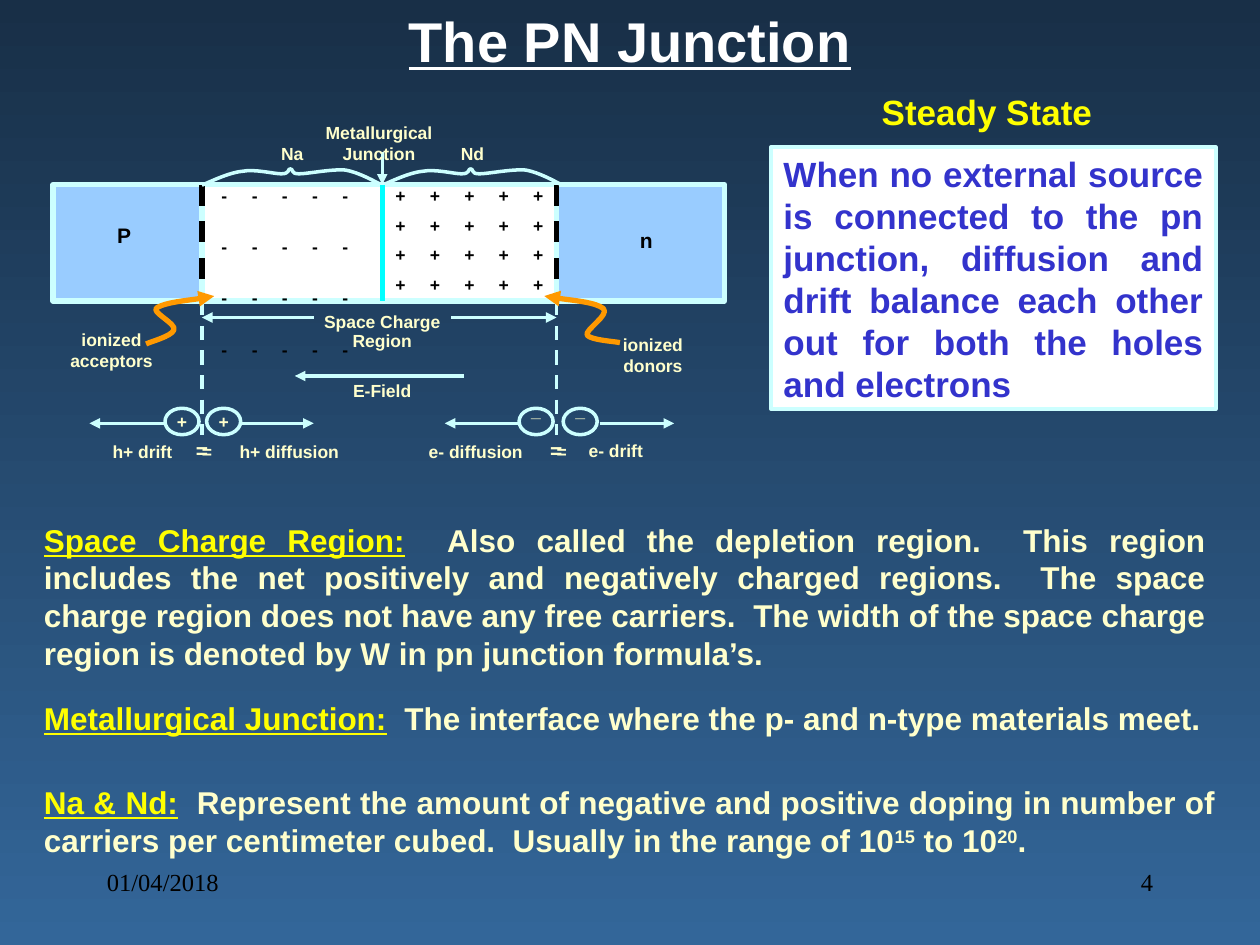
from dataclasses import dataclass
from typing import Any, NamedTuple

import lxml.etree
import pptx
import pptx.dml.color
import pptx.enum.dml
import pptx.enum.shapes
import pptx.enum.text
import pptx.oxml.ns
import pptx.util

Align = pptx.enum.text.PP_ALIGN
Anchor = pptx.enum.text.MSO_ANCHOR
Shape = pptx.enum.shapes.MSO_SHAPE
CELL = pptx.util.Inches(0.1)  # the slide is a grid of 100 columns by 75 rows


@dataclass(frozen=True)
class Theme:
    top: str = "182F47"
    bottom: str = "336699"
    outline: str = "CCFFFF"
    neutral: str = "99CCFF"
    junction: str = "00FFFF"
    pointer: str = "FF9900"
    label: str = "FFFFCC"
    accent: str = "FFFF00"
    quote: str = "3333CC"
    white: str = "FFFFFF"
    black: str = "000000"
    title: int = 32
    heading: int = 20
    body: int = 18
    footer: int = 14
    region: int = 12
    small: int = 10


THEME = Theme()


class Box(NamedTuple):
    col: float
    row: float
    cols: float
    rows: float


class Run(NamedTuple):
    text: str
    color: str = THEME.label
    underline: bool = False
    raised: bool = False


Point = tuple[float, float]


def cells(*values: float) -> list[int]:
    return [round(value * CELL) for value in values]


def rgb(color: str) -> pptx.dml.color.RGBColor:
    return pptx.dml.color.RGBColor.from_string(color)


def assign(target: Any, values: dict[str, Any]) -> None:
    for name, value in values.items():
        setattr(target, name, value)


def child(parent: Any, tag: str, **attributes: str) -> Any:
    return lxml.etree.SubElement(parent, pptx.oxml.ns.qn(tag), attributes)


def write(paragraph: Any, runs: list[Run], size: int, font: str = "Arial",
          bold: bool = True, **layout: Any) -> None:
    assign(paragraph, layout)
    for part in runs:
        run = paragraph.add_run()
        run.text = part.text
        assign(run.font, {"name": font, "size": pptx.util.Pt(size), "bold": bold,
                          "underline": part.underline})
        run.font.color.rgb = rgb(part.color)
        if part.raised:
            run.font._element.set("baseline", "30000")


def text(slide: Any, box: Box, runs: list[Run], size: int = THEME.small,
         alignment: Any = Align.CENTER, **style: Any) -> None:
    frame = slide.shapes.add_textbox(*cells(*box)).text_frame
    frame.word_wrap = True
    write(frame.paragraphs[0], runs, size, alignment=alignment, **style)


def charges(slide: Any, box: Box, sign: str, step: float, gap: float) -> None:
    """Four rows of five signs, set on tab stops `step` columns apart."""
    frame = slide.shapes.add_textbox(*cells(*box)).text_frame
    frame.word_wrap = True
    for row in range(4):
        paragraph = frame.paragraphs[0] if row == 0 else frame.add_paragraph()
        write(paragraph, [Run("\t".join(sign * 5), THEME.black)], THEME.small,
              space_before=pptx.util.Pt(gap if row else 0))
        stops = child(paragraph._p.get_or_add_pPr(), "a:tabLst")
        for column in range(1, 5):
            child(stops, "a:tab", pos=str(cells(step * column)[0]), algn="l")


def stroke(item: Any, color: str, width: float, dashed: bool = False, arrow: bool = False) -> None:
    item.line.color.rgb = rgb(color)
    item.line.width = pptx.util.Pt(width)
    if dashed:
        item.line.dash_style = pptx.enum.dml.MSO_LINE.DASH
    if arrow:
        child(item.line._get_or_add_ln(), "a:tailEnd", type="triangle")


def line(slide: Any, start: Point, end: Point, color: str = THEME.outline,
         width: float = 2, **style: bool) -> None:
    connector = slide.shapes.add_connector(
        pptx.enum.shapes.MSO_CONNECTOR.STRAIGHT, *cells(*start, *end))
    stroke(connector, color, width, **style)
    child(connector._element.spPr, "a:effectLst")


def panel(slide: Any, kind: Any, box: Box, fill: str | None, width: float = 2) -> Any:
    shape = slide.shapes.add_shape(kind, *cells(*box))
    shape.shadow.inherit = False
    if fill:
        shape.fill.solid()
        shape.fill.fore_color.rgb = rgb(fill)
    else:
        shape.fill.background()
    stroke(shape, THEME.outline, width)
    return shape


def curve(slide: Any, knots: list[Point], color: str, width: float, arrow: bool = False) -> None:
    """Draw cubic Bézier segments; knots are start, then control, control, end."""
    builder = slide.shapes.build_freeform(*cells(*knots[0]))
    builder.add_line_segments([cells(*knot) for knot in knots[1:]], close=False)
    shape = builder.convert_to_shape()
    steps = list(shape._element.iter(pptx.oxml.ns.qn("a:lnTo")))
    for first in range(0, len(steps), 3):
        outline = steps[first].getparent()
        segment = child(outline, "a:cubicBezTo")
        for step in steps[first:first + 3]:
            segment.append(step[0])
            outline.remove(step)
    shape.shadow.inherit = False
    shape.fill.background()
    stroke(shape, color, width, arrow=arrow)


def carrier(slide: Any, col: float, sign: str, lift: float) -> None:
    frame = panel(slide, Shape.OVAL, Box(col, 32.4, 2.7, 2.1), None).text_frame
    assign(frame, {"word_wrap": False, "vertical_anchor": Anchor.MIDDLE, "margin_top": 0,
                   "margin_bottom": cells(lift)[0]})
    write(frame.paragraphs[0], [Run(sign)], THEME.small, alignment=Align.CENTER)


TOP, BASE, FLOW = 14.65, 23.9, 33.6
LEFT, MIDDLE, RIGHT = 16.03, 30.34, 44.17
BRACE = [(0, 1.3), (.5, 1.1), (2.1, .3), (3.2, .2), (4.2, 0), (5.7, .4), (6.3, .4), (7, .4),
         (6.8, 0), (7, 0), (7.3, 0), (7, .4), (7.7, .4), (8.4, .4), (10.3, 0), (11.4, .1),
         (12.5, .3), (13.7, 1), (14.3, 1.3)]
ACCEPTOR_POINTER = [(11.6, 27.3), (12, 27.1), (13.6, 26.7), (13.8, 26.2), (14.1, 25.7),
                    (11.8, 24.7), (12.5, 24.4), (13.2, 24), (16.1, 23.7), (17, 23.5)]
DONOR_POINTER = [(49.2, 27.2), (48.8, 27.1), (46.9, 27), (46.6, 26.6), (46.4, 26.2),
                 (48.4, 25), (47.9, 24.5), (47.3, 24), (44.2, 23.7), (43.2, 23.5)]
LABELS = [
    ("Na", Box(20.5, 10.85, 5.4, 2.7)), ("Nd", Box(34.8, 10.85, 5.4, 2.7)),
    ("Metallurgical Junction", Box(22.93, 9.2, 14.3, 4.3)),
    ("ionized acceptors", Box(4.15, 25.6, 9.4, 4.3)),
    ("ionized donors", Box(47.62, 26, 8.4, 4.3)),
    ("h+ drift", Box(6.6, 34.5, 9.4, 2.7)), ("h+ diffusion", Box(17.5, 34.5, 10.9, 2.7)),
    ("e- diffusion", Box(32.3, 34.5, 10.9, 2.7)), ("e- drift", Box(44.17, 34.45, 9.4, 2.7)),
    ("=", Box(15.05, 34.5, 2, 2.7)), ("=", Box(43.2, 34.5, 2, 2.7)),
]
ARROWS = [((MIDDLE, 12.1), (MIDDLE, TOP)), ((24.9, 25.2), (LEFT, 25.2)),
          ((35.8, 25.2), (RIGHT, 25.2)), ((36.8, 29.84), (23.4, 29.84)),
          ((19, FLOW), (24.9, FLOW)), ((47.6, FLOW), (53.5, FLOW)),
          ((41.2, FLOW), (35.3, FLOW)), ((13.1, FLOW), (7.1, FLOW))]
DEFINITIONS = [
    (Box(2.5, 40.83, 94.2, 13), "Space Charge Region:", [Run(
        "Also called the depletion region.  This region includes the net positively and "
        "negatively charged regions.  The space charge region does not have any free carriers.  "
        "The width of the space charge region is denoted by W in pn junction formula’s.")]),
    (Box(2.5, 55, 95, 4), "Metallurgical Junction:", [
        Run("The interface where the p- and n-type materials meet.")]),
    (Box(2.5, 61.67, 95, 7), "Na & Nd:", [
        Run("Represent the amount of negative and positive doping in number of carriers per "
            "centimeter cubed.  Usually in the range of 10"),
        Run("15", raised=True), Run(" to 10"), Run("20", raised=True), Run(".")]),
]


def draw_diagram(slide: Any) -> None:
    edges = [4.2, LEFT, MIDDLE, RIGHT, 57.5]
    fills = [THEME.neutral, THEME.white, THEME.white, THEME.neutral]
    for start, end, fill in zip(edges, edges[1:], fills):
        panel(slide, Shape.RECTANGLE, Box(start, TOP, end - start, BASE - TOP), fill, 3)
    for edge in (LEFT, RIGHT):
        line(slide, (edge, TOP), (edge, BASE), THEME.black, 3, dashed=True)
        line(slide, (edge, BASE), (edge, 34.5), dashed=True)
    for name, col, row in (("P", 7.15, 17.2), ("n", 48.6, 17.6)):
        text(slide, Box(col, row, 5.4, 3), [Run(name, THEME.black)], THEME.region)
    charges(slide, Box(16.6, 14.2, 13.3, 10.2), "-", 2.4, 17.2)
    charges(slide, Box(30.4, 14.2, 14.5, 10.2), "+", 2.73, 4.9)
    for shift in (LEFT, MIDDLE):
        curve(slide, [(x + shift, y + 13.4) for x, y in BRACE], THEME.outline, 2)
    line(slide, (MIDDLE, TOP), (MIDDLE, BASE), THEME.junction, 3)
    for start, end in ARROWS:
        line(slide, start, end, arrow=True)
    for knots in (ACCEPTOR_POINTER, DONOR_POINTER):
        curve(slide, knots, THEME.pointer, 3, arrow=True)
    for col, sign, lift in ((16.4, "+", 0), (13.1, "+", 0), (41.2, "_", 1.7), (44.7, "_", 1.7)):
        carrier(slide, col, sign, lift)
    for name, box in LABELS:
        text(slide, box, [Run(name)])
    for name, row, rows in (("Space Charge Region", 24.4, 4), ("E-Field", 29.84, 2.5)):
        text(slide, Box(23.93, row, 12.8, rows), [Run(name)], line_spacing=0.9)
    for col, alignment in ((14.2, Align.RIGHT), (42.5, Align.CENTER)):
        text(slide, Box(col, 34.2, 3.3, 3), [Run("=")], THEME.region, alignment)


def draw_explanations(slide: Any) -> None:
    text(slide, Box(10, 0, 80, 6.3), [Run("The PN Junction", THEME.white, True)], THEME.title)
    text(slide, Box(60.83, 6.7, 35, 4.3), [Run("Steady State", THEME.accent)], THEME.heading)
    quote = panel(slide, Shape.RECTANGLE, Box(61.2, 11.67, 35.3, 20.8), THEME.white).text_frame
    assign(quote, {"word_wrap": True, "vertical_anchor": Anchor.MIDDLE})
    write(quote.paragraphs[0], [Run(
        "When no external source is connected to the pn junction, diffusion and drift balance "
        "each other out for both the holes and electrons", THEME.quote)],
        THEME.heading, alignment=Align.JUSTIFY)
    for box, term, meaning in DEFINITIONS:
        text(slide, box, [Run(term, THEME.accent, True), Run("  ", THEME.accent), *meaning],
             THEME.body, Align.JUSTIFY)
    for col, note, alignment in ((7.5, "01/04/2018", Align.LEFT), (71.7, "4", Align.RIGHT)):
        text(slide, Box(col, 68.3, 20.8, 5), [Run(note, THEME.black)], THEME.footer, alignment,
             font="Times New Roman", bold=False)


def main() -> None:
    deck = pptx.Presentation()
    assign(deck, {"slide_width": 100 * CELL, "slide_height": 75 * CELL})
    slide = deck.slides.add_slide(deck.slide_layouts[6])
    backdrop = slide.background.fill
    backdrop.gradient()
    backdrop.gradient_angle = 270
    for stop, color in zip(backdrop.gradient_stops, (THEME.top, THEME.bottom)):
        stop.color.rgb = rgb(color)
    draw_diagram(slide)
    draw_explanations(slide)
    deck.save("out.pptx")


if __name__ == "__main__":
    main()
